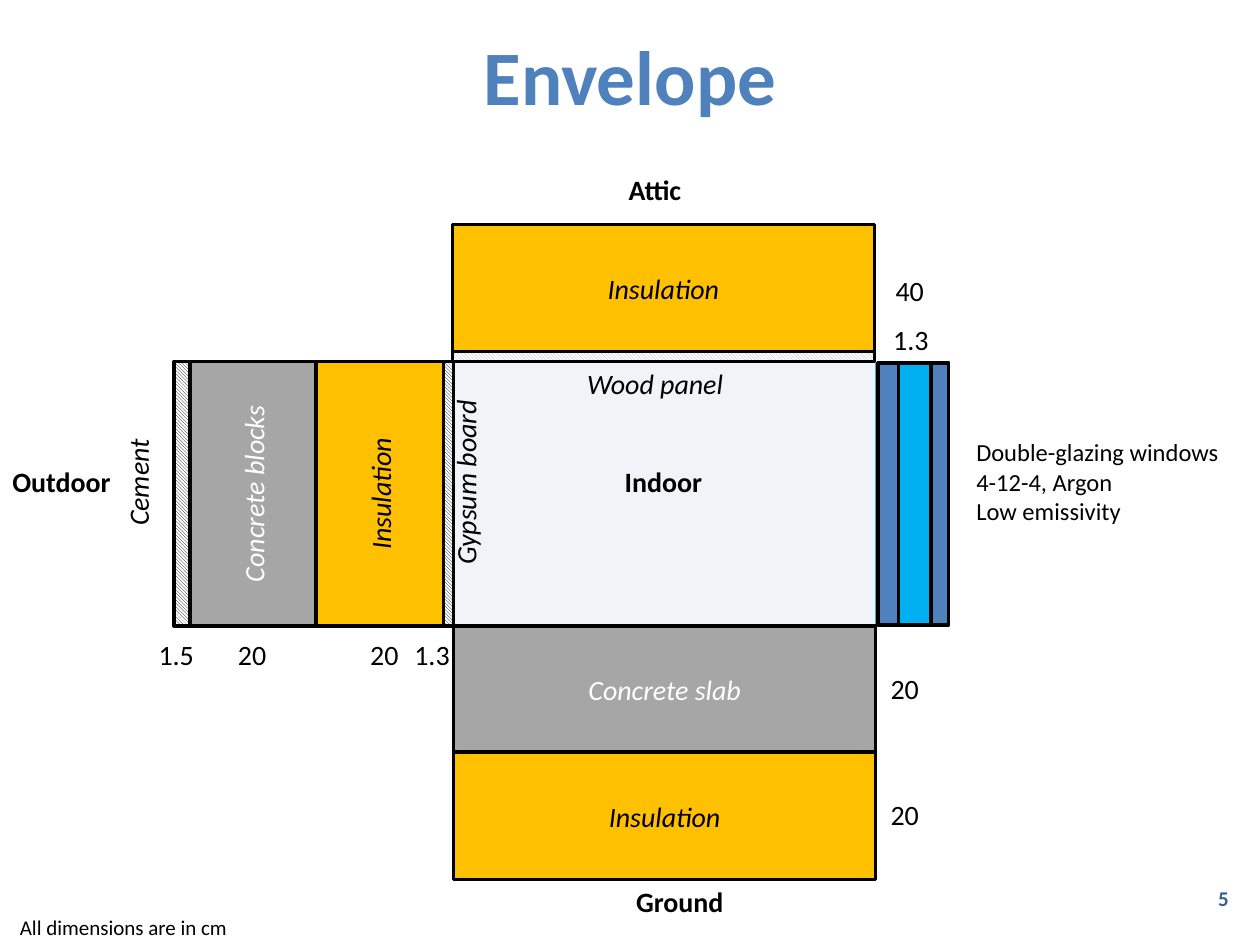
"""Draws the wall, floor, ceiling and window layers of a building envelope."""
from dataclasses import dataclass
from typing import Optional

from lxml import etree
from pptx import Presentation
from pptx.dml.color import RGBColor
from pptx.enum.dml import MSO_PATTERN
from pptx.enum.shapes import MSO_SHAPE
from pptx.enum.text import MSO_ANCHOR, MSO_AUTO_SIZE, PP_ALIGN
from pptx.oxml.ns import qn
from pptx.util import Inches, Pt

RECTANGLE = MSO_SHAPE.RECTANGLE
HATCH = MSO_PATTERN.LIGHT_DOWNWARD_DIAGONAL
LEFT, CENTER = PP_ALIGN.LEFT, PP_ALIGN.CENTER
TOP, MIDDLE = MSO_ANCHOR.TOP, MSO_ANCHOR.MIDDLE
FIT_SHAPE = MSO_AUTO_SIZE.SHAPE_TO_FIT_TEXT
COLUMNS, ROWS = 100, 75


@dataclass(frozen=True)
class Theme:
    font: str = "Calibri"
    ink: str = "000000"
    paper: str = "FFFFFF"
    blue: str = "4F81BD"
    number_blue: str = "376092"
    concrete: str = "A6A6A6"
    insulation: str = "FFC000"
    argon: str = "00B0F0"
    room: str = "DCE6F2"
    room_edge: str = "46AAC5"
    room_opacity: int = 42
    title: int = 44
    label: int = 16
    detail: int = 14
    note: int = 12
    outline: float = 2
    thin_outline: float = 0.75


@dataclass(frozen=True)
class Box:
    column: float
    row: float
    columns: float
    rows: float


@dataclass(frozen=True)
class Style:
    size: int
    color: str
    bold: bool = False
    italic: bool = False
    align: int = LEFT
    anchor: int = TOP


@dataclass(frozen=True)
class Layer:
    thickness: float
    fill: str
    name: str = ""
    text_color: str = "000000"
    hatched: bool = False


@dataclass(frozen=True)
class Stack:
    area: Box
    layers: tuple[Layer, ...]
    side_by_side: bool
    upright_text: bool = False


@dataclass(frozen=True)
class Label:
    text: str
    box: Box
    style: Style
    upright: bool = False
    wrap: bool = False
    grow: bool = True


THEME = Theme()
MEASURE = Style(THEME.label, THEME.ink)
PLACE = Style(THEME.label, THEME.ink, bold=True)
MATERIAL = Style(THEME.label, THEME.ink, italic=True, align=CENTER)
DETAIL = Style(THEME.detail, THEME.ink)
NOTE = Style(THEME.note, THEME.ink)
TITLE = Style(THEME.title, THEME.blue, bold=True, align=CENTER, anchor=MIDDLE)
NUMBER = Style(THEME.note, THEME.number_blue, bold=True, anchor=MIDDLE)

ROOM = Box(36, 28.7, 33.5, 21)
CONCRETE_BLOCKS = Layer(10, THEME.concrete, "Concrete blocks", THEME.paper)
CONCRETE_SLAB = Layer(10, THEME.concrete, "Concrete slab", THEME.paper)
INSULATION = Layer(10.1, THEME.insulation, "Insulation")
STACKS = (
    Stack(Box(13.8, ROOM.row, 22.2, ROOM.rows),
          (Layer(1.3, THEME.ink, hatched=True), CONCRETE_BLOCKS, INSULATION,
           Layer(0.8, THEME.ink, hatched=True)), True, True),
    Stack(Box(ROOM.column, 49.7, ROOM.columns, 20.1), (CONCRETE_SLAB, INSULATION), False),
    Stack(Box(35.9, 17.8, ROOM.columns, 10.9),
          (INSULATION, Layer(0.8, THEME.concrete, hatched=True)), False),
    Stack(Box(69.7, 28.8, 5.6, 20.8),
          (Layer(1.6, THEME.blue), Layer(2.6, THEME.argon), Layer(1.4, THEME.blue)), True),
)
LABELS = (
    Label("Envelope", Box(5, -0.3, 90, 12.5), TITLE, wrap=True, grow=False),
    Label("5", Box(95.7, 69.3, 4.3, 4), NUMBER, wrap=True, grow=False),
    Label("1.5", Box(11.6, 50.1, 4.9, 3.7), MEASURE),
    Label("20", Box(17.9, 50.1, 4.3, 3.7), MEASURE),
    Label("20", Box(28.4, 50.1, 4.3, 3.7), MEASURE),
    Label("1.3", Box(31.9, 50.1, 4.9, 3.7), MEASURE),
    Label("20", Box(69.7, 52.8, 4.3, 3.7), MEASURE),
    Label("20", Box(69.7, 62.8, 4.3, 3.7), MEASURE),
    Label("40", Box(70.1, 21.2, 4.3, 3.7), MEASURE),
    Label("1.3", Box(69.9, 25.1, 4.9, 3.7), MEASURE),
    Label("Cement", Box(9.1, 26.5, 4.7, 23.6), MATERIAL, upright=True, wrap=True),
    Label("Gypsum board", Box(35.1, 26.5, 4.7, 23.6), MATERIAL, upright=True, wrap=True),
    Label("Wood panel", Box(45.5, 28.6, 13, 3.7), MATERIAL),
    Label("Outdoor", Box(0, 36.4, 9.9, 3.7), PLACE),
    Label("Indoor", Box(48.6, 36.4, 8.3, 3.7), PLACE),
    Label("Attic", Box(48.9, 13.2, 6.3, 3.7), PLACE),
    Label("Ground", Box(49.5, 69.7, 9.1, 3.7), PLACE),
    Label("Double-glazing windows\n4-12-4, Argon\nLow emissivity",
          Box(76.5, 34.2, 21.4, 8.1), DETAIL),
    Label("All dimensions are in cm", Box(0.6, 72.1, 18.7, 3), NOTE),
)


def rgb(color: str) -> RGBColor:
    """Turn a hex string into a colour."""
    return RGBColor.from_string(color)


def place(deck, box: Box) -> tuple[int, int, int, int]:
    """Turn grid cells into left, top, width and height on the slide."""
    column, row = deck.slide_width / COLUMNS, deck.slide_height / ROWS
    return (round(box.column * column), round(box.row * row),
            round(box.columns * column), round(box.rows * row))


def write(frame, text: str, style: Style, upright: bool = False) -> None:
    """Write styled text into a frame, turned to read upwards if upright."""
    frame.text = text
    frame.vertical_anchor = style.anchor
    if upright:
        frame._txBody.find(qn("a:bodyPr")).set("vert", "vert270")
    for paragraph in frame.paragraphs:
        paragraph.alignment = style.align
        for run in paragraph.runs:
            run.font.name = THEME.font
            run.font.size = Pt(style.size)
            run.font.bold = style.bold
            run.font.italic = style.italic
            run.font.color.rgb = rgb(style.color)


def draw_panel(deck, slide, box: Box, fill: str, line: str, weight: float,
               hatched: bool = False, opacity: Optional[int] = None):
    """Draw an outlined rectangle with a solid, hatched or translucent fill."""
    panel = slide.shapes.add_shape(RECTANGLE, *place(deck, box))
    panel.shadow.inherit = False
    panel.line.color.rgb = rgb(line)
    panel.line.width = Pt(weight)
    if hatched:
        panel.fill.patterned()
        panel.fill.pattern = HATCH
        panel.fill.fore_color.rgb = rgb(fill)
        panel.fill.back_color.rgb = rgb(THEME.paper)
    else:
        panel.fill.solid()
        panel.fill.fore_color.rgb = rgb(fill)
    if opacity is not None:
        color = panel._element.spPr.find(qn("a:solidFill")).find(qn("a:srgbClr"))
        etree.SubElement(color, qn("a:alpha")).set("val", str(opacity * 1000))
    return panel


def draw_stack(deck, slide, stack: Stack) -> None:
    """Draw the layers of a stack one after another across its area."""
    area, offset = stack.area, 0.0
    for layer in stack.layers:
        if stack.side_by_side:
            box = Box(area.column + offset, area.row, layer.thickness, area.rows)
        else:
            box = Box(area.column, area.row + offset, area.columns, layer.thickness)
        panel = draw_panel(deck, slide, box, layer.fill, THEME.ink, THEME.outline, layer.hatched)
        if layer.name:
            style = Style(THEME.label, layer.text_color, italic=True, align=CENTER, anchor=MIDDLE)
            write(panel.text_frame, layer.name, style, stack.upright_text)
        offset += layer.thickness


def draw_label(deck, slide, label: Label) -> None:
    """Draw a free-standing text."""
    frame = slide.shapes.add_textbox(*place(deck, label.box)).text_frame
    frame.word_wrap = label.wrap
    if label.grow:
        frame.auto_size = FIT_SHAPE
    write(frame, label.text, label.style, label.upright)


def main() -> None:
    """Build the slide and save it."""
    deck = Presentation()
    deck.slide_width, deck.slide_height = Inches(10), Inches(7.5)
    slide = deck.slides.add_slide(deck.slide_layouts[6])
    draw_panel(deck, slide, ROOM, THEME.room, THEME.room_edge, THEME.thin_outline,
               opacity=THEME.room_opacity)
    for stack in STACKS:
        draw_stack(deck, slide, stack)
    for label in LABELS:
        draw_label(deck, slide, label)
    deck.save("out.pptx")


if __name__ == "__main__":
    main()
